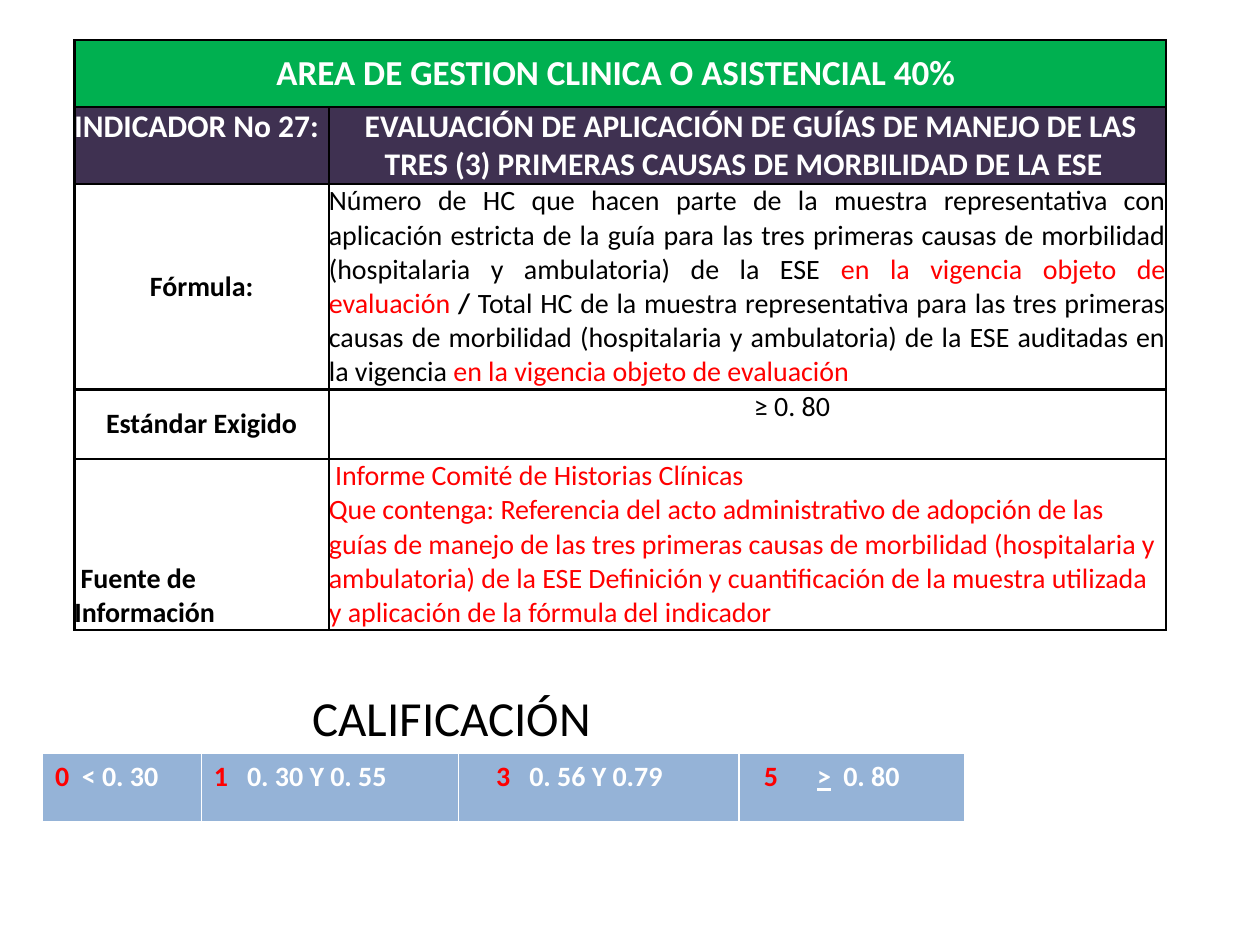
from lxml import etree
from pptx import Presentation
from pptx import util as u
from pptx.dml.color import RGBColor
from pptx.enum import text
from pptx.oxml.ns import qn

WHITE = RGBColor(0xFF, 0xFF, 0xFF)
BLACK = RGBColor(0, 0, 0)
RED = RGBColor(0xFF, 0, 0)
GREEN = RGBColor(0, 0xB0, 0x50)
PURPLE = RGBColor(0x3F, 0x31, 0x51)
BLUE = RGBColor(0x95, 0xB3, 0xD7)
FONT = "Calibri"
LEFT, CENTER, JUSTIFY = (text.PP_ALIGN.LEFT, text.PP_ALIGN.CENTER,
                         text.PP_ALIGN.JUSTIFY)
TOP, MIDDLE, BOTTOM = (text.MSO_ANCHOR.TOP, text.MSO_ANCHOR.MIDDLE,
                       text.MSO_ANCHOR.BOTTOM)


def add_runs(paragraph, runs, size, align=LEFT, tabs=()):
    """Each run is (wording, colour, bold[, underline])."""
    paragraph.alignment = align
    if tabs:
        tab_list = etree.SubElement(paragraph._p.get_or_add_pPr(), qn("a:tabLst"))
        for stop in tabs:
            etree.SubElement(tab_list, qn("a:tab"), pos=str(u.Cm(stop)), algn="l")
    for wording, colour, bold, *underline in runs:
        run = paragraph.add_run()
        run.text = wording
        run.font.name, run.font.size = FONT, u.Pt(size)
        run.font.bold, run.font.color.rgb = bold, colour
        if underline:
            run.font.underline = underline[0]


def set_borders(cell, colour, widths):
    """Widths in points: left, right, top, bottom."""
    properties = cell._tc.get_or_add_tcPr()
    for index, (side, width) in enumerate(zip("LRTB", widths)):
        line = etree.Element(qn(f"a:ln{side}"), w=str(u.Pt(width)))
        fill = etree.SubElement(line, qn("a:solidFill"))
        etree.SubElement(fill, qn("a:srgbClr"), val=str(colour))
        properties.insert(index, line)


def add_grid(slide, left, top, columns, rows, border, widths):
    table = slide.shapes.add_table(
        len(rows), len(columns), u.Cm(left), u.Cm(top),
        u.Cm(sum(columns)), u.Cm(sum(rows))).table
    table.horz_banding = False
    for column, width in zip(table.columns, columns):
        column.width = u.Cm(width)
    for row, height in zip(table.rows, rows):
        row.height = u.Cm(height)
    for cell in table.iter_cells():
        cell.fill.background()
        set_borders(cell, border, widths)
    return table


def fill_cell(cell, paragraphs, size, align=LEFT, anchor=TOP, fill=None,
              margins=(0, 0, 0, 0), tabs=()):
    """Margins in cm: left, right, top, bottom."""
    (cell.margin_left, cell.margin_right,
     cell.margin_top, cell.margin_bottom) = map(u.Cm, margins)
    cell.vertical_anchor = anchor
    if fill is not None:
        cell.fill.solid()
        cell.fill.fore_color.rgb = fill
    frame = cell.text_frame
    for index, runs in enumerate(paragraphs):
        paragraph = frame.add_paragraph() if index else frame.paragraphs[0]
        add_runs(paragraph, runs, size, align, tabs)


def indicator_table(slide, left, top):
    table = add_grid(slide, left, top, [5.13, 16.87],
                     [1.35, 1.55, 4.14, 1.4, 3.43], BLACK, [1.5] * 4)
    # Area heading
    table.cell(0, 0).merge(table.cell(0, 1))
    fill_cell(table.cell(0, 0),
              [[("AREA DE GESTION CLINICA O ASISTENCIAL 40% ", WHITE, True)]],
              20, CENTER, MIDDLE, GREEN)
    # Indicator
    fill_cell(table.cell(1, 0), [[("INDICADOR No 27:", WHITE, True)]],
              18, fill=PURPLE)
    fill_cell(table.cell(1, 1), [[(
        " EVALUACIÓN DE APLICACIÓN DE GUÍAS DE MANEJO DE LAS TRES (3) "
        "PRIMERAS CAUSAS DE MORBILIDAD DE LA ESE ", WHITE, True)]],
        18, CENTER, fill=PURPLE)
    # Row labels
    labels = [("Fórmula:", CENTER, MIDDLE), ("Estándar Exigido", CENTER, MIDDLE),
              (" Fuente de Información", LEFT, BOTTOM)]
    for row, (label, align, anchor) in enumerate(labels, start=2):
        fill_cell(table.cell(row, 0), [[(label, BLACK, True)]], 16, align, anchor)
    # Formula
    fill_cell(table.cell(2, 1), [[
        ("Número de HC que hacen parte de la muestra representativa con "
         "aplicación estricta de la guía para las tres primeras causas de "
         "morbilidad (hospitalaria y ambulatoria) de la ESE ", BLACK, False),
        ("en la vigencia objeto de evaluación ", RED, False),
        ("/ ", BLACK, True),
        ("Total HC de la muestra representativa para las tres primeras causas "
         "de morbilidad (hospitalaria y ambulatoria) de la ESE auditadas en la "
         "vigencia ", BLACK, False),
        ("en la vigencia objeto de evaluación", RED, False)]], 16, JUSTIFY)
    # Required standard
    fill_cell(table.cell(3, 1), [[("≥ 0. 80", BLACK, False)]], 16, CENTER,
              margins=(1.8, 0, 0, 0))
    # Source of information
    sources = [
        " Informe Comité de Historias Clínicas",
        "Que contenga: Referencia del acto administrativo de adopción de las "
        "guías de manejo de las tres primeras causas de morbilidad "
        "(hospitalaria y ambulatoria) de la ESE Definición y cuantificación "
        "de la muestra utilizada",
        "y aplicación de la fórmula del indicador"]
    fill_cell(table.cell(4, 1), [[(line, RED, False)] for line in sources],
              16, anchor=BOTTOM)


def rating_title(slide, left, top, width, height):
    frame = slide.shapes.add_textbox(
        u.Cm(left), u.Cm(top), u.Cm(width), u.Cm(height)).text_frame
    frame.word_wrap = False
    add_runs(frame.paragraphs[0], [("CALIFICACIÓN", BLACK, False)], 28, CENTER)


def rating_table(slide, left, top):
    table = add_grid(slide, left, top, [3.2, 5.18, 5.66, 4.55], [1.4],
                     WHITE, [1, 1, 1, 3])
    # Score, range runs, left margin, tab stops
    ratings = [
        ("0", [("\t< 0. 30", WHITE, True)], 0.25, [0.54]),
        ("1", [("\t0. 30 Y 0. 55", WHITE, True)], 0.25, [0.67]),
        ("3", [("\t0. 56 Y 0.79", WHITE, True)], 0.76, [0.67]),
        ("5", [("\t", WHITE, True), (">", WHITE, True, True),
               ("\t0. 80", WHITE, True, False)], 0.5, [1.07, 1.6]),
    ]
    for column, (score, limits, margin, tabs) in enumerate(ratings):
        fill_cell(table.cell(0, column), [[(score, RED, True)] + limits], 16,
                  fill=BLUE, margins=(margin, 0.25, 0.13, 0.13), tabs=tabs)


def main():
    deck = Presentation()
    deck.slide_width, deck.slide_height = u.Cm(25.4), u.Cm(19.05)
    slide = deck.slides.add_slide(deck.slide_layouts[6])
    indicator_table(slide, 1.5, 0.81)
    rating_title(slide, 6.02, 13.74, 6.17, 1.45)
    rating_table(slide, 0.86, 15.19)
    deck.save("out.pptx")


if __name__ == "__main__":
    main()
